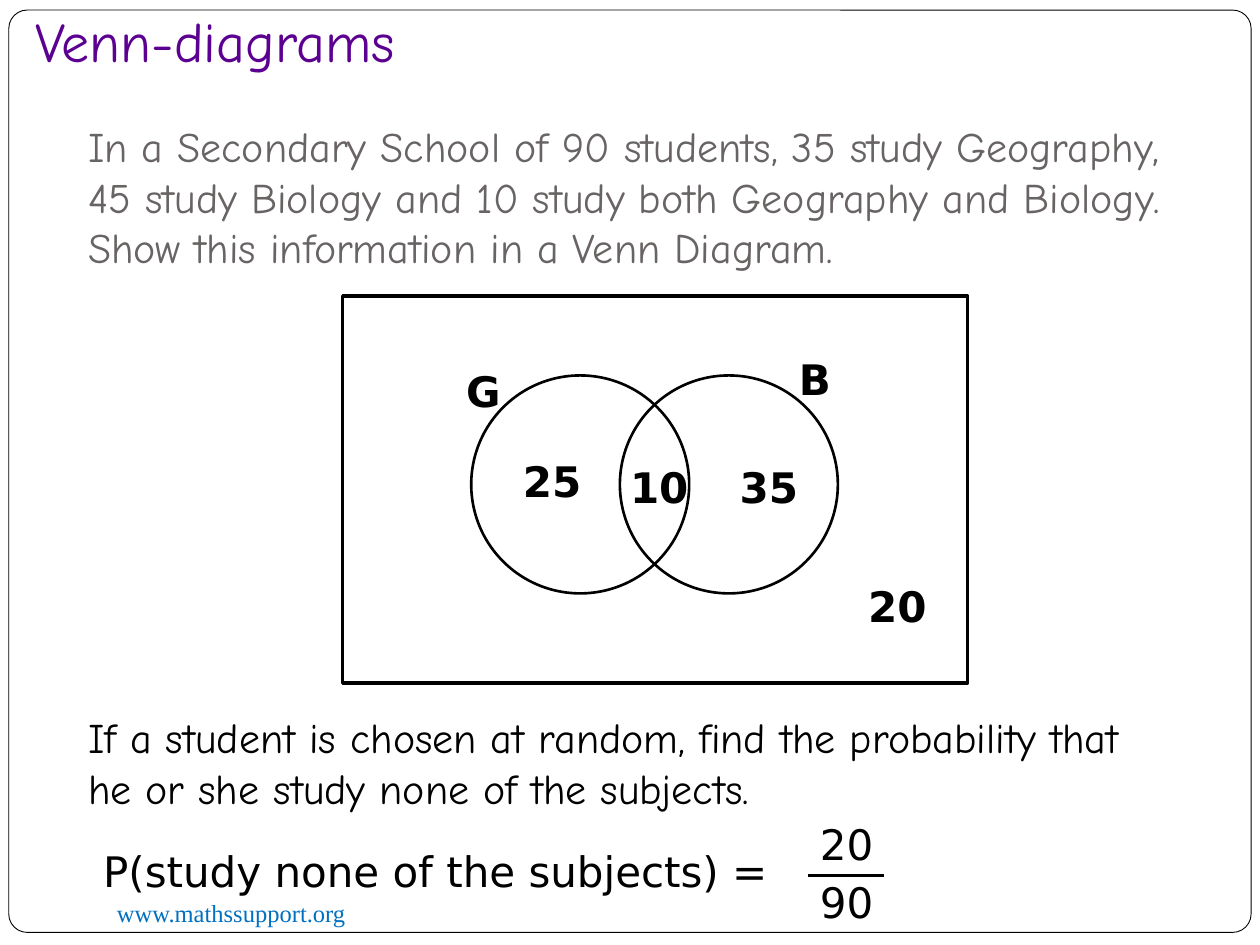
"""Build a slide that solves a probability question with a Venn diagram."""
from lxml.etree import SubElement
from pptx import Presentation
from pptx.dml.color import RGBColor
from pptx.enum.shapes import MSO_CONNECTOR, MSO_SHAPE
from pptx.enum.text import MSO_ANCHOR, MSO_AUTO_SIZE
from pptx.oxml.ns import qn
from pptx.util import Inches, Pt

BLACK = RGBColor(0x00, 0x00, 0x00)
WHITE = RGBColor(0xFF, 0xFF, 0xFF)
PURPLE = RGBColor(0x5B, 0x00, 0x91)
GREY = RGBColor(0x69, 0x64, 0x64)
BLUE = RGBColor(0x00, 0x70, 0xC0)
HAND = "Comic Neue"
SANS = "DejaVu Sans"
SERIF = "Times New Roman"


def write_text(frame, text, font=SANS, size=24, color=BLACK, bold=False):
    """Write text into a frame, with a line break at each newline."""
    para = frame.paragraphs[0]
    for index, line in enumerate(text.split("\n")):
        if index:
            para.add_line_break()
        span = para.add_run()
        span.text = line
        span.font.name = font
        span.font.size = Pt(size)
        span.font.bold = bold
        span.font.color.rgb = color


class VennPage:
    """Hold the line style and the current slide."""

    def __init__(self, page, line_color=BLACK):
        """Keep the slide and the colour of its lines."""
        self.page = page
        self.line_color = line_color

    def outline(self, kind, left, top, width, height, weight, fill=None):
        """Add an outlined shape."""
        shape = self.page.shapes.add_shape(
            kind, Inches(left), Inches(top), Inches(width), Inches(height))
        shape.shadow.inherit = False
        if fill is None:
            shape.fill.background()
        else:
            shape.fill.solid()
            shape.fill.fore_color.rgb = fill
        shape.line.color.rgb = self.line_color
        shape.line.width = Pt(weight)
        return shape

    def text(self, text, left, top, width, height, side=0.1, bottom=0.05,
             anchor=MSO_ANCHOR.TOP, grow=True, **style):
        """Add a wrapping text box."""
        box = self.page.shapes.add_textbox(
            Inches(left), Inches(top), Inches(width), Inches(height))
        frame = box.text_frame
        frame.word_wrap = True
        frame.auto_size = (MSO_AUTO_SIZE.SHAPE_TO_FIT_TEXT if grow
                           else MSO_AUTO_SIZE.NONE)
        frame.vertical_anchor = anchor
        frame.margin_left = frame.margin_right = Inches(side)
        frame.margin_top = Inches(0.05)
        frame.margin_bottom = Inches(bottom)
        write_text(frame, text, **style)

    def label(self, text, left, top, height=0.4):
        """Add a bold label of the diagram."""
        self.text(text, left, top, 0.55, height, side=0, bold=True)

    def rule(self, left, top, width, weight):
        """Add a horizontal line."""
        line = self.page.shapes.add_connector(
            MSO_CONNECTOR.STRAIGHT, Inches(left), Inches(top),
            Inches(left + width), Inches(top))
        line.line.color.rgb = self.line_color
        line.line.width = Pt(weight)
        SubElement(line._element.spPr, qn("a:effectLst"))


def main():
    """Build and save the deck."""
    deck = Presentation()
    deck.slide_width = Inches(10)
    deck.slide_height = Inches(7.5)
    venn = VennPage(deck.slides.add_slide(deck.slide_layouts[6]))

    border = venn.outline(MSO_SHAPE.ROUNDED_RECTANGLE,
                          0.07, 0.08, 9.86, 7.32, 0.5, fill=WHITE)
    border.adjustments[0] = 0.02
    venn.text("www.mathssupport.org", 0.83, 7.08, 3.25, 0.34,
              font=SERIF, size=14, color=BLUE)
    venn.text("Venn-diagrams", 0.18, 0, 8.5, 0.67, grow=False,
              font=HAND, size=32, color=PURPLE)
    venn.text("If a student is chosen at random, find the probability that "
              "he or she study none of the subjects.",
              0.6, 5.6, 8.75, 0.91, font=HAND)
    venn.text("In a Secondary School of 90 students, 35 study Geography, "
              "45 study Biology and 10 study both Geography and Biology.\n"
              "Show this information in a Venn Diagram.",
              0.6, 0.63, 9.12, 1.63, bottom=0.1, anchor=MSO_ANCHOR.BOTTOM,
              grow=False, font=HAND, color=GREY)

    venn.outline(MSO_SHAPE.RECTANGLE, 2.72, 2.35, 4.96, 3.07, 2)
    for left in (3.74, 4.92):
        venn.outline(MSO_SHAPE.OVAL, left, 2.98, 1.73, 1.73, 1.5)
    for text, left, top in (("10", 5, 3.61), ("35", 5.87, 3.61),
                            ("B", 6.34, 2.76), ("G", 3.7, 2.85),
                            ("25", 4.15, 3.57)):
        venn.label(text, left, top)
    venn.label("20", 6.89, 4.56, height=0.5)

    venn.text("P(study none of the subjects) =", 0.72, 6.66, 6.72, 0.5)
    for text, top in (("20", 6.45), ("90", 6.91)):
        venn.text(text, 6.41, top, 0.67, 0.5)
    venn.rule(6.41, 6.95, 0.61, 1.75)

    deck.save("out.pptx")


if __name__ == "__main__":
    main()
